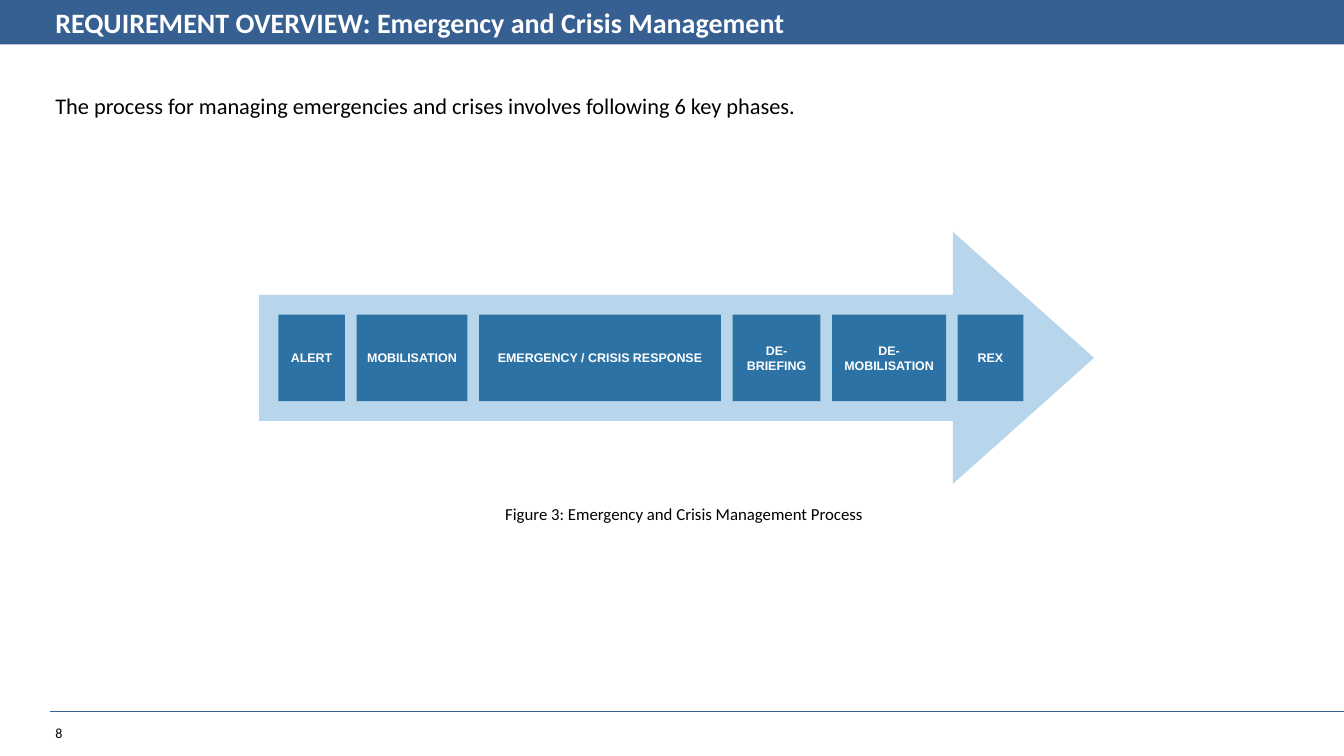
"""Build the emergency and crisis management overview slide."""
import pptx
import pptx.dml.color
import pptx.enum.shapes
import pptx.enum.text
import pptx.oxml.ns
import pptx.util
from lxml import etree

SHAPES = pptx.enum.shapes.MSO_SHAPE
ALIGN = pptx.enum.text.PP_ALIGN
ANCHOR = pptx.enum.text.MSO_ANCHOR
COLORS = {
    "banner": "376092",
    "arrow": "B7D5EB",
    "phase": "2D72A4",
    "light": "FFFFFF",
    "dark": "000000",
}

deck = pptx.Presentation()
deck.slide_width = pptx.util.Inches(13.33)
deck.slide_height = pptx.util.Inches(7.5)
slide = deck.slides.add_slide(deck.slide_layouts[6])
column = deck.slide_width / 100
row = deck.slide_height / 100


def add_block(preset, color, left, top, width, height):
    block = slide.shapes.add_shape(
        preset, int(left * column), int(top * row), int(width * column), int(height * row)
    )
    block.shadow.inherit = False
    block.fill.solid()
    block.fill.fore_color.rgb = pptx.dml.color.RGBColor.from_string(COLORS[color])
    block.line.fill.background()
    return block


def write(holder, text, size, color, font="Calibri", bold=False, align=ALIGN.LEFT, anchor=ANCHOR.TOP):
    frame = holder.text_frame
    frame.word_wrap = True
    frame.vertical_anchor = anchor
    frame.text = text
    paragraph = frame.paragraphs[0]
    paragraph.alignment = align
    paragraph.font.name = font
    paragraph.font.size = pptx.util.Pt(size)
    paragraph.font.bold = bold
    paragraph.font.color.rgb = pptx.dml.color.RGBColor.from_string(COLORS[color])


footer_rule = slide.shapes.add_connector(
    pptx.enum.shapes.MSO_CONNECTOR.STRAIGHT,
    int(3.75 * column), int(94.13 * row), deck.slide_width, int(94.13 * row),
)
footer_rule.line.color.rgb = pptx.dml.color.RGBColor.from_string(COLORS["banner"])
footer_rule.line.width = pptx.util.Pt(0.75)
etree.SubElement(footer_rule._element.spPr, pptx.oxml.ns.qn("a:effectLst"))

add_block(SHAPES.RECTANGLE, "banner", 0, 0, 100, 5.87)

passages = [
    ("8", (3.38, 95.2, 5.33, 3.6), 10, "dark", False, ALIGN.LEFT, ANCHOR.TOP),
    ("REQUIREMENT OVERVIEW: Emergency and Crisis Management",
     (3.38, 0, 78.54, 5.87), 20, "light", True, ALIGN.LEFT, ANCHOR.MIDDLE),
    ("The process for managing emergencies and crises involves following 6 key phases.",
     (3.38, 11.47, 92.95, 78.4), 16, "dark", False, ALIGN.JUSTIFY, ANCHOR.TOP),
    ("Figure 3: Emergency and Crisis Management Process",
     (25.88, 64.67, 50.04, 5.33), 12, "dark", False, ALIGN.CENTER, ANCHOR.BOTTOM),
]
for text, (left, top, width, height), size, color, bold, align, anchor in passages:
    passage = slide.shapes.add_textbox(
        int(left * column), int(top * row), int(width * column), int(height * row)
    )
    write(passage, text, size, color, bold=bold, align=align, anchor=anchor)

process_arrow = add_block(SHAPES.RIGHT_ARROW, "arrow", 19.28, 30.67, 62.12, 33.33)
process_arrow.adjustments[0] = 0.5
process_arrow.adjustments[1] = 0.56

phases = [
    ("ALERT", 4.95),
    ("MOBILISATION", 8.25),
    ("EMERGENCY / CRISIS RESPONSE", 18),
    ("DE-BRIEFING", 6.53),
    ("DE-MOBILISATION", 8.48),
    ("REX", 4.88),
]
phase_left, phases_right = 20.71, 76.14
gap = (phases_right - phase_left - sum(width for _, width in phases)) / (len(phases) - 1)
for label, width in phases:
    phase = add_block(SHAPES.ROUNDED_RECTANGLE, "phase", phase_left, 41.6, width, 11.47)
    phase.adjustments[0] = 0
    phase.text_frame.margin_left = phase.text_frame.margin_right = pptx.util.Inches(0.06)
    write(phase, label, 8.9, "light", "Arial", True, ALIGN.CENTER, ANCHOR.MIDDLE)
    phase_left += width + gap

deck.save("out.pptx")
